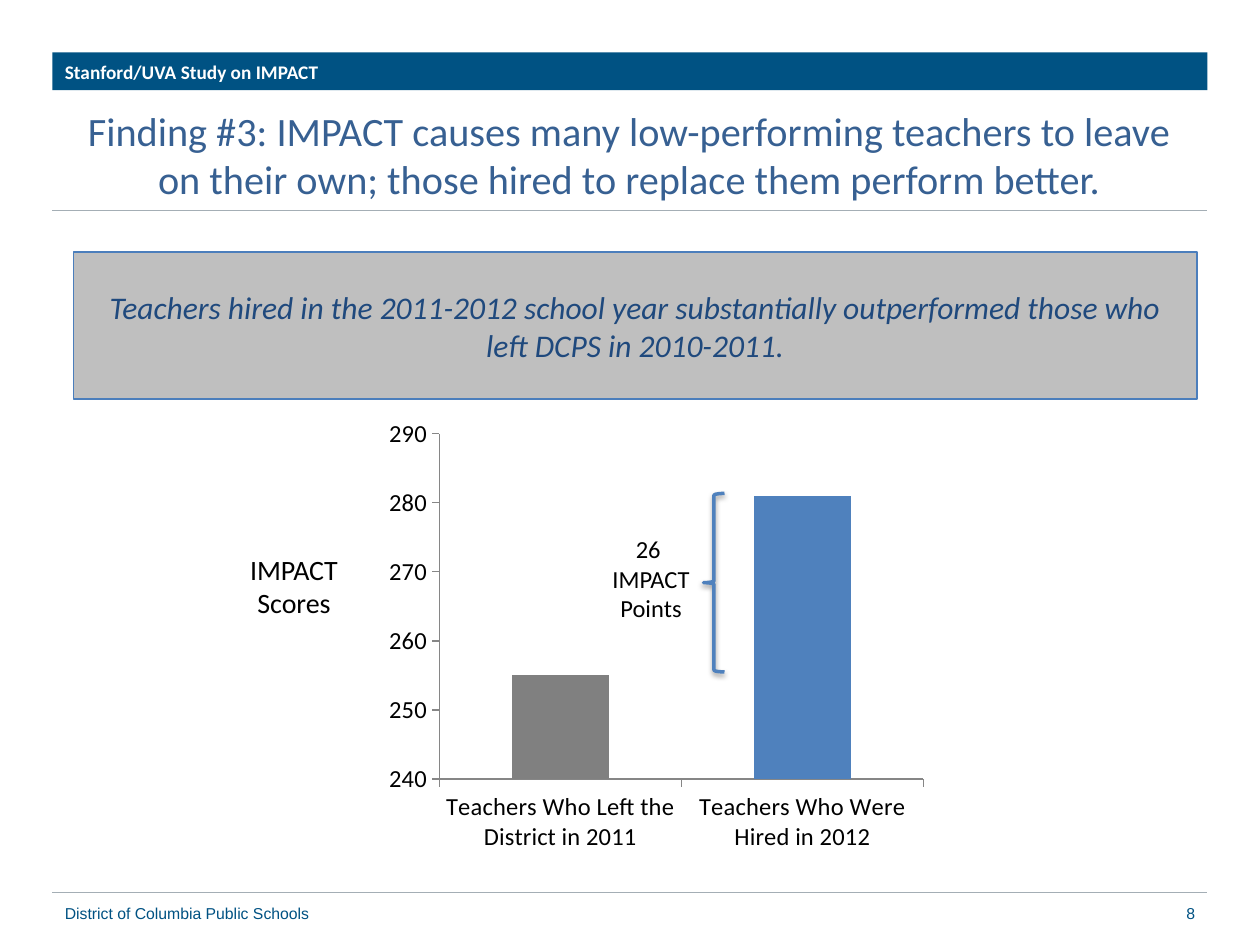
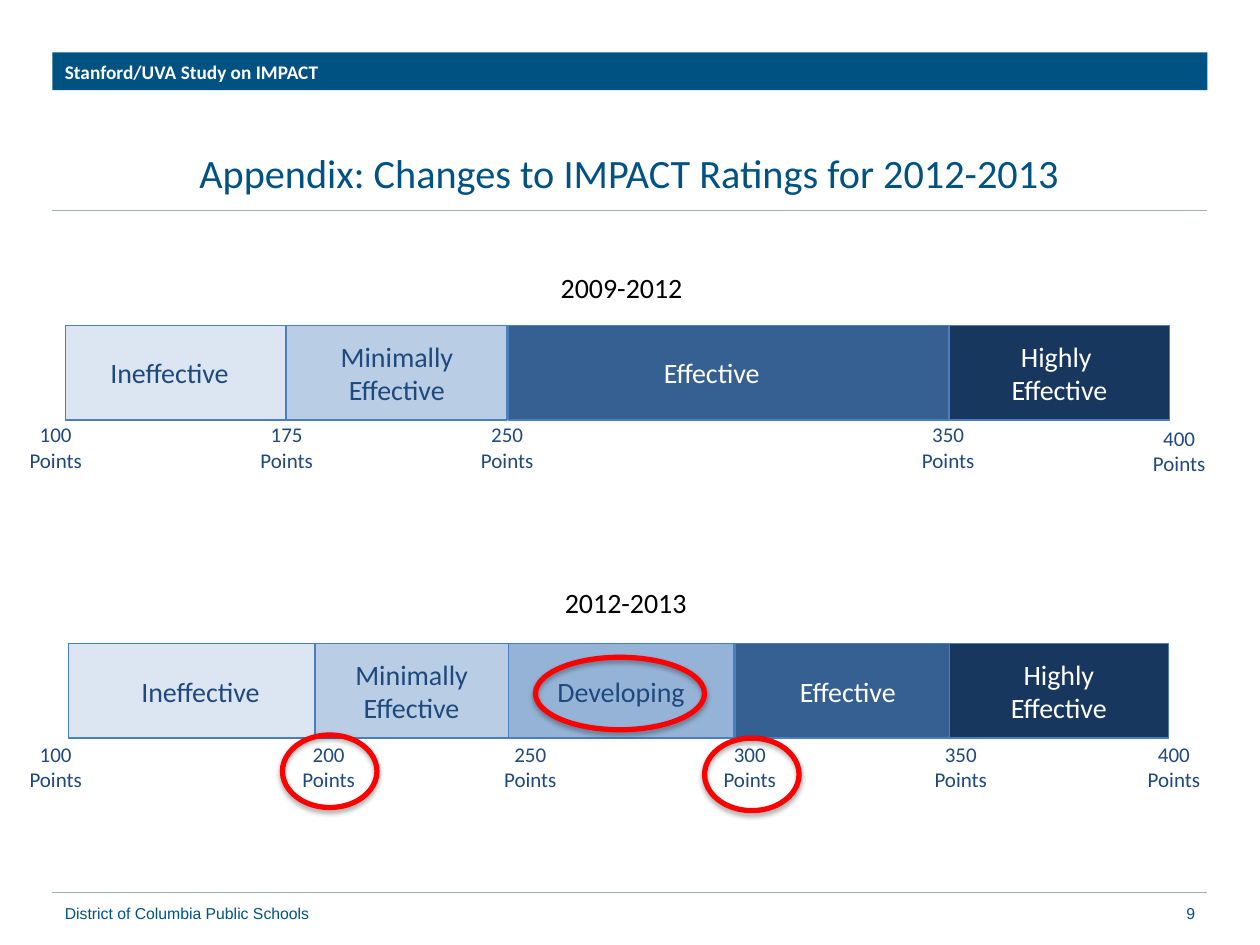
import pptx
import pptx.chart.data
import pptx.dml.color
import pptx.enum.chart
import pptx.enum.shapes
import pptx.enum.text
import pptx.oxml
import pptx.oxml.ns
import pptx.util

RGB = pptx.dml.color.RGBColor
SHAPE = pptx.enum.shapes.MSO_SHAPE
ALIGN = pptx.enum.text.PP_ALIGN
ANCHOR = pptx.enum.text.MSO_ANCHOR
Pt = pptx.util.Pt

BLACK = RGB(0x00, 0x00, 0x00)
WHITE = RGB(0xFF, 0xFF, 0xFF)
BRAND = RGB(0x00, 0x52, 0x83)
RULE = RGB(0xA4, 0xAE, 0xB5)
AXIS = RGB(0x86, 0x86, 0x86)
SILVER = RGB(0xBF, 0xBF, 0xBF)
GRAY = RGB(0x80, 0x80, 0x80)
BLUE = RGB(0x4F, 0x81, 0xBD)
OUTLINE = RGB(0x4B, 0x7E, 0xBC)
NAVY = RGB(0x1F, 0x49, 0x7D)
RED = RGB(0xFF, 0x00, 0x00)
PALE = RGB(0xDC, 0xE6, 0xF2)
LIGHT = RGB(0xB9, 0xCD, 0xE5)
MEDIUM = RGB(0x95, 0xB3, 0xD7)
STRONG = RGB(0x37, 0x60, 0x92)
DARK = RGB(0x17, 0x37, 0x5E)

COLUMNS, ROWS = 120, 90
LEFT, WIDTH = 5, 110
BAR_HEIGHT, LABEL_WIDTH = 9, 10


class Deck:
    def __init__(self):
        self.prs = pptx.Presentation()
        self.prs.slide_width = pptx.util.Inches(10)
        self.prs.slide_height = pptx.util.Inches(7.5)
        self.s = None

    def box(self, x, y, w, h):
        col = self.prs.slide_width / COLUMNS
        row = self.prs.slide_height / ROWS
        return [round(v) for v in (x * col, y * row, w * col, h * row)]

    def slide(self, title, title_row, title_color, number):
        self.s = self.prs.slides.add_slide(self.prs.slide_layouts[6])
        for row in (20, 85):
            self.rule(row)
        self.shape(SHAPE.RECTANGLE, (LEFT, 5, WIDTH, 3.6), BRAND, None,
                   "Stanford/UVA Study on IMPACT", size=11, color=WHITE,
                   bold=True, align=ALIGN.LEFT)
        self.text((LEFT, title_row, WIDTH, 11.4), title, 23, title_color)
        self.text((LEFT, 85, 79, 4), "District of Columbia Public Schools", 9,
                  BRAND, font="Arial", align=ALIGN.LEFT)
        self.text((86, 85, 29, 4), str(number), 9, BRAND, font="Arial",
                  align=ALIGN.RIGHT)

    def rule(self, row):
        x, y, w, _ = self.box(LEFT, row, WIDTH, 0)
        sp = self.s.shapes.add_connector(
            pptx.enum.shapes.MSO_CONNECTOR.STRAIGHT, x, y, x + w, y)
        sp.line.color.rgb = RULE
        sp.line.width = Pt(0.5)
        sp._element.spPr.append(pptx.oxml.parse_xml(
            f"<a:effectLst {pptx.oxml.ns.nsdecls('a')}/>"))

    def set_text(self, sp, text, size, color, font="Calibri",
                 align=ALIGN.CENTER, anchor=ANCHOR.MIDDLE, bold=False,
                 italic=False):
        tf = sp.text_frame
        tf.word_wrap = True
        tf.vertical_anchor = anchor
        tf.text = text
        for p in tf.paragraphs:
            p.alignment = align
            p.font.name = font
            p.font.size = Pt(size)
            p.font.bold = bold
            p.font.italic = italic
            p.font.color.rgb = color

    def text(self, place, text, size, color, **style):
        sp = self.s.shapes.add_textbox(*self.box(*place))
        self.set_text(sp, text, size, color, **style)

    def shape(self, kind, place, fill, line, text="", weight=0.75, **style):
        sp = self.s.shapes.add_shape(kind, *self.box(*place))
        sp.shadow.inherit = False
        if fill is None:
            sp.fill.background()
        else:
            sp.fill.solid()
            sp.fill.fore_color.rgb = fill
        if line is None:
            sp.line.fill.background()
        else:
            sp.line.color.rgb = line
            sp.line.width = Pt(weight)
        if text:
            self.set_text(sp, text, **style)
        return sp

    def marker(self, kind, place, line, weight, opacity):
        sp = self.shape(kind, place, None, line, weight=weight)
        effects = sp._element.spPr.find(pptx.oxml.ns.qn("a:effectLst"))
        effects.append(pptx.oxml.parse_xml(
            f"<a:outerShdw {pptx.oxml.ns.nsdecls('a')} blurRad='{Pt(3.1)}' "
            f"dist='{Pt(1.7)}' dir='5400000' rotWithShape='0'>"
            f"<a:srgbClr val='000000'><a:alpha val='{opacity * 1000}'/>"
            "</a:srgbClr></a:outerShdw>"))

    def columns(self, place, values, colors):
        data = pptx.chart.data.CategoryChartData()
        data.categories = list(values)
        data.add_series("Series 1", list(values.values()))
        chart = self.s.shapes.add_chart(
            pptx.enum.chart.XL_CHART_TYPE.COLUMN_CLUSTERED,
            *self.box(*place), data).chart
        chart.has_legend = False
        chart.has_title = False
        chart.font.name = "Calibri"
        chart.font.size = Pt(14)
        chart.font.color.rgb = BLACK
        plot = chart.plots[0]
        plot.gap_width = 150
        plot.vary_by_categories = False
        for i, color in enumerate(colors):
            fill = plot.series[0].points[i].format.fill
            fill.solid()
            fill.fore_color.rgb = color
        for axis in (chart.category_axis, chart.value_axis):
            axis.has_major_gridlines = False
            axis.major_tick_mark = pptx.enum.chart.XL_TICK_MARK.OUTSIDE
            axis.format.line.color.rgb = AXIS
        chart.value_axis.minimum_scale = 240
        chart.value_axis.maximum_scale = 290
        chart.value_axis.major_unit = 10

    def scale(self, row, bars, points):
        for x, w, text, fill, color, shift in bars:
            sp = self.shape(SHAPE.RECTANGLE, (x, row, w, BAR_HEIGHT), fill,
                            OUTLINE, text, size=16, color=color)
            sp.text_frame.margin_right += self.box(2 * shift, 0, 0, 0)[0]
        for value, (center, drop) in points.items():
            place = (center - LABEL_WIDTH / 2, row + drop, LABEL_WIDTH, 6.1)
            self.text(place, f"{value}\nPoints", 12, NAVY, anchor=ANCHOR.TOP)


def finding(deck):
    deck.slide("Finding #3: IMPACT causes many low-performing teachers to leave "
               "on their own; those hired to replace them perform better.",
               9, STRONG, 8)
    deck.columns((36, 39, 53, 43),
                 {"Teachers Who Left the District in 2011": 255,
                  "Teachers Who Were Hired in 2012": 281}, (GRAY, BLUE))
    deck.marker(SHAPE.LEFT_BRACE, (67, 47, 2, 17), BLUE, 2, 38)
    deck.shape(SHAPE.RECTANGLE, (7, 24, 107, 14), SILVER, OUTLINE,
               "Teachers hired in the 2011-2012 school year substantially "
               "outperformed those who left DCPS in 2010-2011.",
               size=18, color=NAVY, italic=True)
    deck.text((54, 50.3, 16, 9.7), "26 \vIMPACT Points", 14, BLACK,
              anchor=ANCHOR.TOP)
    deck.text((20, 52, 16, 7.7), "IMPACT Scores", 16, BLACK, anchor=ANCHOR.TOP)


def ratings(deck):
    deck.slide("Appendix: Changes to IMPACT Ratings for 2012-2013",
               10.7, BRAND, 9)
    deck.scale(31, (
        (6.25, 21, "Ineffective", PALE, NAVY, 0.6),
        (27.3, 21, "Minimally Effective", LIGHT, NAVY, 0),
        (48.4, 42, "Effective", STRONG, WHITE, 1.6),
        (90.4, 21, "Highly \nEffective", DARK, WHITE, 0),
    ), {100: (5.3, 8.6), 175: (27.3, 8.6), 250: (48.3, 8.6),
        350: (90.3, 8.6), 400: (112.3, 8.9)})
    deck.scale(61.3, (
        (6.5, 25.2, "Ineffective", PALE, NAVY, 0),
        (30, 18.4, "Minimally\nEffective", LIGHT, NAVY, 0),
        (48.4, 21.5, "Developing", MEDIUM, NAVY, 0),
        (70, 21.5, "Effective", STRONG, WHITE, 0),
        (90.4, 20.9, "Highly\nEffective", DARK, WHITE, 0),
    ), {value: (center, 8.7) for value, center in (
        (100, 5.3), (200, 31.3), (250, 50.5),
        (300, 71.4), (350, 91.5), (400, 111.8))})
    for x, y, years in ((49.6, 25.2, "2009-2012"), (50, 55.2, "2012-2013")):
        deck.text((x, y, 19.2, 4.4), years, 16, BLACK, anchor=ANCHOR.TOP)
    for x, y, w in ((26.9, 70, 9), (51, 62.6, 16.1), (67.1, 70.3, 9)):
        deck.marker(SHAPE.OVAL, (x, y, w, 6.9), RED, 3, 35)


def main():
    deck = Deck()
    finding(deck)
    ratings(deck)
    deck.prs.save("out.pptx")


if __name__ == "__main__":
    main()
